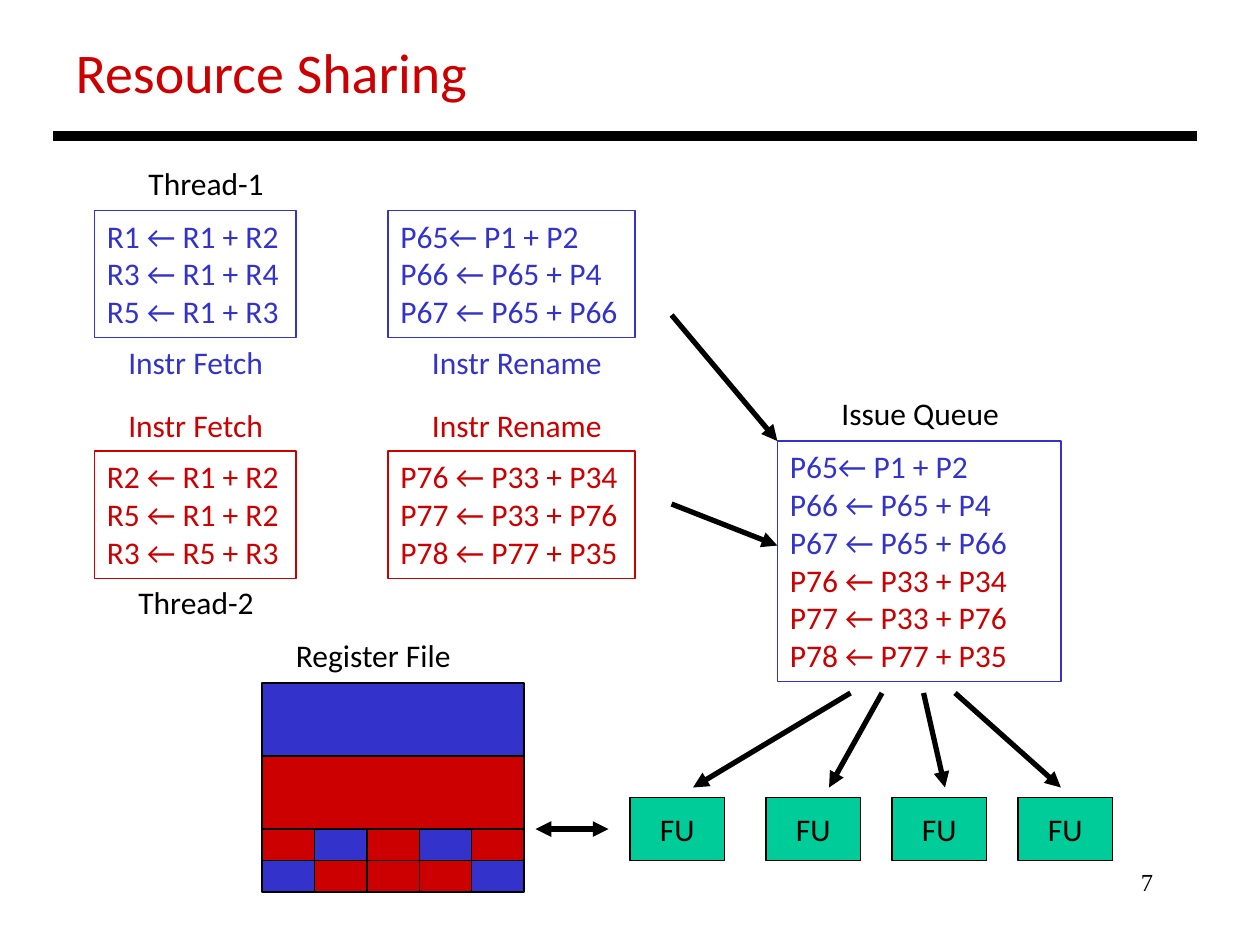
from dataclasses import dataclass

from lxml import etree
from pptx import Presentation
from pptx.dml.color import RGBColor
from pptx.enum.shapes import MSO_CONNECTOR, MSO_SHAPE
from pptx.enum.text import MSO_ANCHOR, MSO_AUTO_SIZE, PP_ALIGN
from pptx.oxml.ns import qn
from pptx.util import Inches, Pt

RECT = MSO_SHAPE.RECTANGLE
LINE = MSO_CONNECTOR.STRAIGHT
TOP, MID = MSO_ANCHOR.TOP, MSO_ANCHOR.MIDDLE
LEFT, CENTER, RIGHT = PP_ALIGN.LEFT, PP_ALIGN.CENTER, PP_ALIGN.RIGHT
GROW, FIXED = MSO_AUTO_SIZE.SHAPE_TO_FIT_TEXT, MSO_AUTO_SIZE.NONE


@dataclass(frozen=True)
class Theme:
    blue: str = "3333CC"
    red: str = "CC0000"
    green: str = "00CC99"
    black: str = "000000"
    font: str = "Calibri"
    serif: str = "Times New Roman"
    head: int = 32
    body: int = 18
    small: int = 14
    thin: float = 0.75
    thick: int = 3
    rule: int = 6


THEME = Theme()
FLOW = {"word_wrap": False, "auto_size": GROW, "vertical_anchor": TOP}
FIRST = ["P65← P1 + P2", "P66 ← P65 + P4", "P67 ← P65 + P66"]
SECOND = ["P76 ← P33 + P34", "P77 ← P33 + P76", "P78 ← P77 + P35"]
THREADS = [
    (THEME.blue, 1.67, 2.67, ["R1 ← R1 + R2", "R3 ← R1 + R4", "R5 ← R1 + R3"], FIRST),
    (THEME.red, 3.58, 3.17, ["R2 ← R1 + R2", "R5 ← R1 + R2", "R3 ← R5 + R3"], SECOND),
]
LABELS = [
    ("Issue Queue", 6.58, 3.08, 1.47),
    ("Register File", 2.25, 5, 1.44),
    ("Thread-1", 1.08, 1.25, 1.13),
    ("Thread-2", 1, 4.58, 1.13),
]
CELLS = ["RBRBR", "BRRRB"]
UNITS = [5, 6.08, 7.08, 8.08]
ARROWS = [
    (6.75, 5.5, 5.5, 6.25),
    (7, 5.5, 6.58, 6.25),
    (7.33, 5.5, 7.5, 6.25),
    (7.58, 5.5, 8.42, 6.25),
    (5.33, 2.5, 6.17, 3.5),
    (5.33, 4, 6.17, 4.33),
]


def apply(target, form):
    for key, value in form.items():
        setattr(target, key, value)


def write(shape, lines, size=THEME.body, font=THEME.font, align=LEFT, **form):
    frame = shape.text_frame
    apply(frame, {**FLOW, **form})
    for i, (text, color) in enumerate(lines):
        para = frame.add_paragraph() if i else frame.paragraphs[0]
        para.alignment = align
        run = para.add_run()
        run.text = text
        apply(run.font, {"size": Pt(size), "name": font})
        run.font.color.rgb = RGBColor.from_string(color)


def add_label(slide, text, x, y, w, h=0.4, color=THEME.black, **form):
    box = slide.shapes.add_textbox(Inches(x), Inches(y), Inches(w), Inches(h))
    write(box, [(text, color)], **form)


def add_block(slide, x, y, w, h, fill=None, edge=THEME.black):
    block = slide.shapes.add_shape(RECT, Inches(x), Inches(y), Inches(w), Inches(h))
    block.shadow.inherit = False
    if fill:
        block.fill.solid()
        block.fill.fore_color.rgb = RGBColor.from_string(fill)
    else:
        block.fill.background()
    block.line.color.rgb = RGBColor.from_string(edge)
    block.line.width = Pt(THEME.thin)
    return block


def add_line(slide, ends, width=THEME.thick, tips=("tailEnd",)):
    line = slide.shapes.add_connector(LINE, *[Inches(v) for v in ends])
    line.line.color.rgb = RGBColor.from_string(THEME.black)
    line.line.width = Pt(width)
    stroke = line.line._get_or_add_ln()
    for tip in tips:
        etree.SubElement(stroke, qn("a:" + tip), type="triangle")
    etree.SubElement(line._element.spPr, qn("a:effectLst"))


def add_title(slide, text):
    title = slide.shapes.title
    apply(title, {"left": Inches(0.5), "top": Inches(0.25),
                  "width": Inches(3.34), "height": Inches(0.64)})
    write(title, [(text, THEME.red)], THEME.head)


def add_threads(slide):
    for color, top, tag, fetch, rename in THREADS:
        for x, w, lines in [(0.75, 1.6, fetch), (3.08, 1.96, rename)]:
            block = add_block(slide, x, top, w, 1.01, edge=color)
            write(block, [(text, color) for text in lines])
        add_label(slide, "Instr Fetch", 0.92, tag, 1.28, color=color)
        add_label(slide, "Instr Rename", 3.33, tag, 1.56, color=color)


def add_queue(slide):
    queue = add_block(slide, 6.17, 3.5, 2.25, 1.91, edge=THEME.blue)
    lines = [(t, THEME.blue) for t in FIRST] + [(t, THEME.red) for t in SECOND]
    write(queue, lines, word_wrap=True)


def add_file(slide):
    left, top, width, band, cell = 2.08, 5.42, 2.08, 0.58, 0.25
    fills = {"B": THEME.blue, "R": THEME.red}
    for i, key in enumerate("BR"):
        add_block(slide, left, top + i * band, width, band, fills[key])
    step = width / len(CELLS[0])
    for key in "RB":
        for row, keys in enumerate(CELLS):
            for col, mark in enumerate(keys):
                if mark == key:
                    add_block(slide, left + col * step, 6.58 + row * cell,
                              step, cell, fills[key])


def add_units(slide):
    for x in UNITS:
        unit = add_block(slide, x, 6.33, 0.75, 0.5, THEME.green)
        write(unit, [("FU", THEME.black)], align=CENTER,
              auto_size=FIXED, vertical_anchor=MID)


def main():
    deck = Presentation()
    apply(deck, {"slide_width": Inches(10), "slide_height": Inches(7.5)})
    slide = deck.slides.add_slide(deck.slide_layouts[5])
    add_title(slide, "Resource Sharing")
    add_label(slide, "7", 7.17, 6.83, 2.08, 0.5, size=THEME.small,
              font=THEME.serif, align=RIGHT, word_wrap=True, auto_size=FIXED)
    add_line(slide, (0.42, 1.08, 9.5, 1.08), THEME.rule, ())
    add_threads(slide)
    add_queue(slide)
    add_file(slide)
    add_units(slide)
    for ends in ARROWS:
        add_line(slide, ends)
    add_line(slide, (4.25, 6.58, 4.83, 6.58), tips=("headEnd", "tailEnd"))
    for label in LABELS:
        add_label(slide, *label)
    deck.save("out.pptx")


if __name__ == "__main__":
    main()
